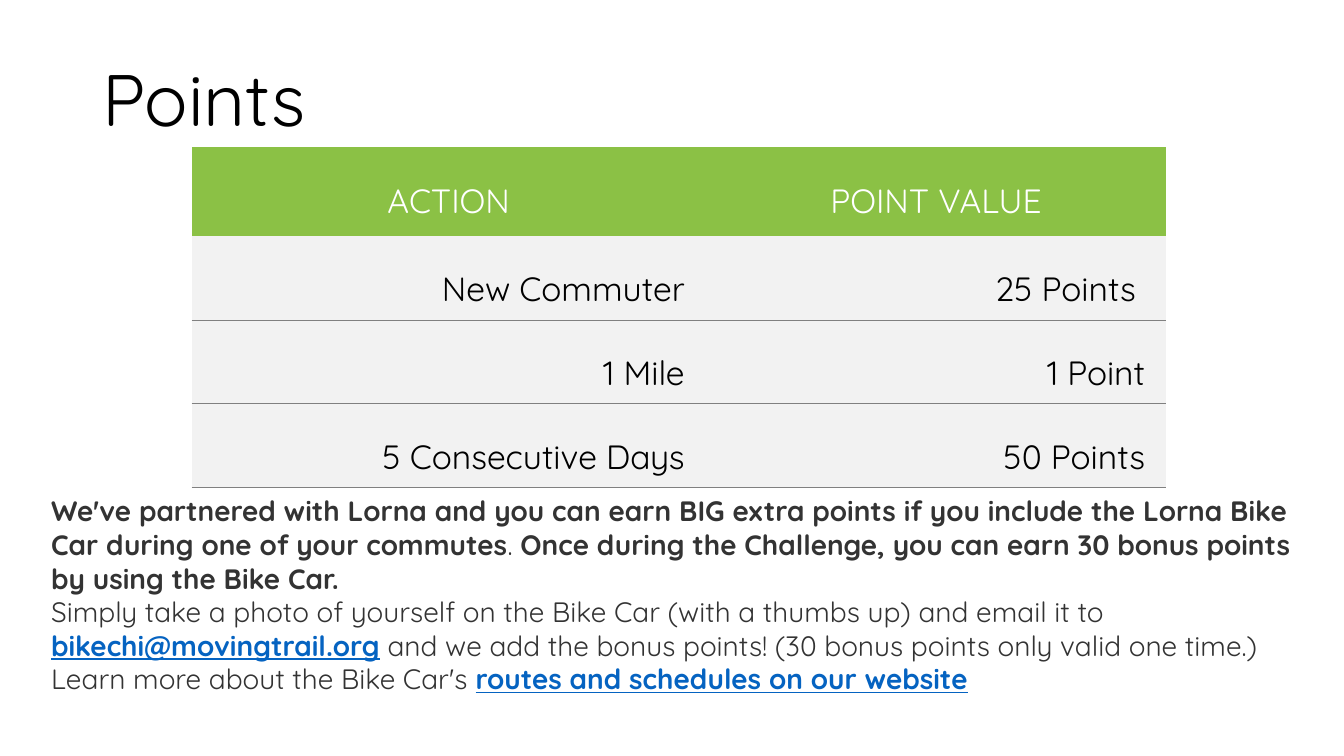
import pptx
import pptx.dml.color
import pptx.enum.text
import pptx.oxml
import pptx.oxml.ns
import pptx.util
from dataclasses import dataclass

ALIGN = pptx.enum.text.PP_ALIGN
ANCHOR = pptx.enum.text.MSO_ANCHOR


@dataclass(frozen=True)
class Theme:
    font: str = "Quicksand"
    black: str = "000000"
    white: str = "FFFFFF"
    body: str = "333333"
    link: str = "0563C1"
    header: str = "8BC145"
    row: str = "F2F2F2"
    rule: str = "808080"
    title_size: int = 52
    table_size: int = 24
    body_size: int = 20
    rule_width: float = 0.75


def assign(target, values):
    for name, value in values.items():
        setattr(target, name, value)


def rgb(code):
    return pptx.dml.color.RGBColor.from_string(code)


def grid(*units):
    return [pptx.util.Inches(unit / 12) for unit in units]


class PointsSlide:
    def __init__(self, deck, theme):
        self.theme = theme
        self.page = deck.slides.add_slide(deck.slide_layouts[6])

    def add_span(self, para, text, size, color, **style):
        span = para.add_run()
        span.text = text
        assign(span.font, {"name": self.theme.font, "size": pptx.util.Pt(size), **style})
        span.font.color.rgb = rgb(color)

    def text(self, place, paragraphs, size, spacing=1.0, anchor=ANCHOR.TOP):
        frame = self.page.shapes.add_textbox(*grid(*place)).text_frame
        assign(frame, {"word_wrap": True, "vertical_anchor": anchor})
        for index, spans in enumerate(paragraphs):
            para = frame.add_paragraph() if index else frame.paragraphs[0]
            para.line_spacing = spacing
            for words, color, style in spans:
                self.add_span(para, words, size, color, **style)

    def borders(self, cell, ruled):
        properties = cell._tc.get_or_add_tcPr()
        for index, side in enumerate(("L", "R", "T", "B")):
            paint = "<a:noFill/>"
            if side in ruled:
                paint = f'<a:solidFill><a:srgbClr val="{self.theme.rule}"/></a:solidFill>'
            width = pptx.util.Pt(self.theme.rule_width)
            line = f'<a:ln{side} {pptx.oxml.ns.nsdecls("a")} w="{width}">{paint}</a:ln{side}>'
            properties.insert(index, pptx.oxml.parse_xml(line))

    def table(self, left, top, widths, heights, rows):
        place = grid(left, top, sum(widths), sum(heights))
        table = self.page.shapes.add_table(len(rows), len(widths), *place).table
        table.horz_banding = False
        for column, width in zip(table.columns, grid(*widths)):
            column.width = width
        for row, height in zip(table.rows, grid(*heights)):
            row.height = height
        names = ("margin_left", "margin_top", "margin_right", "margin_bottom")
        margins = dict(zip(names, map(pptx.util.Inches, (0.21, 0.28, 0.21, 0.1))))
        for number, words in enumerate(rows):
            heading = number == 0
            for cell, label in zip(table.rows[number].cells, words):
                anchor = ANCHOR.MIDDLE if heading else ANCHOR.BOTTOM
                assign(cell, {**margins, "vertical_anchor": anchor})
                cell.fill.solid()
                cell.fill.fore_color.rgb = rgb(self.theme.header if heading else self.theme.row)
                self.borders(cell, "" if heading else "B" if number == 1 else "TB")
                para = cell.text_frame.paragraphs[0]
                para.alignment = ALIGN.CENTER if heading else ALIGN.RIGHT
                color = self.theme.white if heading else self.theme.black
                self.add_span(para, label, self.theme.table_size, color, bold=False)


def main():
    deck = pptx.Presentation()
    assign(deck, {"slide_width": pptx.util.Inches(13.33), "slide_height": pptx.util.Inches(7.5)})
    theme = Theme()
    slide = PointsSlide(deck, theme)
    slide.text((11, 2.4, 138, 19.8), [[("Points", theme.black, {})]],
               theme.title_size, 0.9, ANCHOR.MIDDLE)
    slide.table(22.8, 17.5, (61.2, 54.8), (10.6, 10, 10, 10), [
        ("ACTION", "POINT VALUE"),
        ("New Commuter", "25 Points "),
        ("1 Mile", "1 Point"),
        ("5 Consecutive Days", "50 Points"),
    ])
    plain = (theme.body, {"bold": False})
    strong = (theme.body, {"bold": True})
    linked = (theme.link, {"bold": True, "underline": True})
    offer = [
        ("We've partnered with Lorna and you can earn BIG extra points if you include "
         "the Lorna Bike Car during one of your commutes", *strong),
        (". ", *plain),
        ("Once during the Challenge, you can earn 30 bonus points "
         "by using the Bike Car. ", *strong),
    ]
    steps = [
        ("Simply take a photo of yourself on the Bike Car (with a thumbs up) "
         "and email it to ", *plain),
        ("bikechi@movingtrail.org", *linked),
        (" and we add the bonus points! (30 bonus points only valid one time.) "
         "Learn more about the Bike Car's ", *plain),
        ("routes and schedules on our website", *linked),
    ]
    slide.text((4.9, 58.2, 150, 25.4), [offer, steps], theme.body_size)
    deck.save("out.pptx")


if __name__ == "__main__":
    main()
